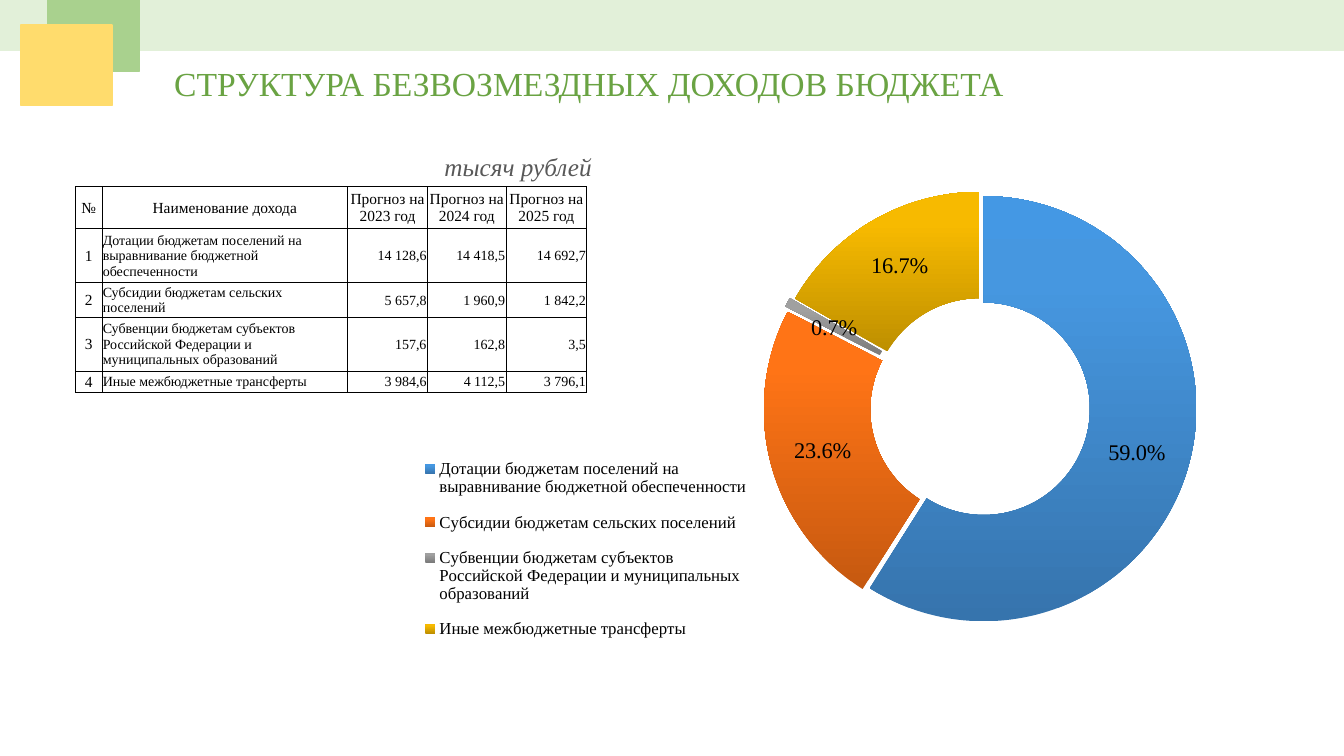
import copy
import dataclasses
import lxml.etree
import pptx
import pptx.chart.data
import pptx.dml.color
import pptx.enum.chart
import pptx.enum.shapes
import pptx.enum.text
import pptx.oxml
import pptx.oxml.ns
import pptx.util

Inches = pptx.util.Inches
Pt = pptx.util.Pt
qn = pptx.oxml.ns.qn
ALIGN = pptx.enum.text.PP_ALIGN
RGB = pptx.dml.color.RGBColor.from_string


@dataclasses.dataclass(frozen=True)
class Theme:
    font: str = "Times New Roman"
    chart_font: str = "Calibri"
    black: str = "000000"
    title: str = "6AA343"
    unit: str = "595959"
    band: str = "E2F0D9"
    green: str = "A9D18E"
    yellow: str = "FFDC6D"
    title_size: int = 24
    unit_size: int = 18
    label_size: int = 16
    legend_size: int = 12
    head_size: int = 11
    body_size: int = 10
    slices: tuple = (
        ("3674AD", "4697E0", "4498E4"),
        ("C65910", "FF7416", "FF7517"),
        ("7B7B7B", "A0A0A0", "A1A1A1"),
        ("BE8F00", "F7BA00", "F8BB00"),
    )


def set_font(font, size, color, name, italic=False):
    font.size = Pt(size)
    font.name = name
    font.italic = italic
    font.color.rgb = RGB(color)


def write(tf, text, *, size, color, font, align=ALIGN.LEFT, italic=False):
    p = tf.paragraphs[0]
    p.alignment = align
    r = p.add_run()
    r.text = text
    set_font(r.font, size, color, font, italic)


def set_layout(parent, x, y, w, h, inner=False):
    for old in parent.findall(qn("c:layout")):
        parent.remove(old)
    layout = lxml.etree.Element(qn("c:layout"))
    manual = lxml.etree.SubElement(layout, qn("c:manualLayout"))
    values = {"layoutTarget": "inner"} if inner else {}
    values |= {"xMode": "edge", "yMode": "edge", "x": x, "y": y, "w": w, "h": h}
    for tag, value in values.items():
        lxml.etree.SubElement(manual, qn(f"c:{tag}")).set("val", str(value))
    return layout


class Deck:
    def __init__(self, theme):
        self.theme = theme
        self.prs = pptx.Presentation()
        self.prs.slide_width = Inches(13.33)
        self.prs.slide_height = Inches(7.5)
        self.s = self.prs.slides.add_slide(self.prs.slide_layouts[6])

    def text(self, box, text, **style):
        tf = self.s.shapes.add_textbox(*map(Inches, box)).text_frame
        tf.word_wrap = False
        write(tf, text, font=self.theme.font, **style)

    def rect(self, box, color):
        kind = pptx.enum.shapes.MSO_SHAPE.RECTANGLE
        sp = self.s.shapes.add_shape(kind, *map(Inches, box))
        sp.shadow.inherit = False
        sp.fill.solid()
        sp.fill.fore_color.rgb = sp.line.color.rgb = RGB(color)
        sp.line.width = Pt(1)

    def border(self, cell):
        props = cell._tc.get_or_add_tcPr()
        for i, side in enumerate(("lnL", "lnR", "lnT", "lnB")):
            ln = pptx.oxml.parse_xml(
                f'<a:{side} {pptx.oxml.ns.nsdecls("a")} w="{Pt(0.5)}"><a:solidFill>'
                f'<a:srgbClr val="{self.theme.black}"/></a:solidFill></a:{side}>')
            props.insert(i, ln)

    def table(self, box, widths, heights, rows):
        t = self.theme
        table = self.s.shapes.add_table(len(rows), len(widths), *map(Inches, box)).table
        for col, width in zip(table.columns, widths):
            col.width = Inches(width)
        for row, height in zip(table.rows, heights):
            row.height = Inches(height)
        for i, row in enumerate(rows):
            for j, text in enumerate(row):
                cell = table.cell(i, j)
                cell.fill.background()
                self.border(cell)
                cell.margin_left = cell.margin_right = cell.margin_top = Inches(0.01)
                cell.margin_bottom = 0
                cell.vertical_anchor = pptx.enum.text.MSO_ANCHOR.MIDDLE
                centred = i == 0 or j == 0
                align = ALIGN.CENTER if centred else ALIGN.LEFT if j == 1 else ALIGN.RIGHT
                write(cell.text_frame, text, size=t.head_size if centred else t.body_size,
                      color=t.black, font=t.font, align=align)

    def gradient(self, fill, colors):
        fill.gradient()
        fill.gradient_angle = 90
        first = fill.gradient_stops[0]._gs
        first.addnext(copy.deepcopy(first))
        for stop, position, color in zip(fill.gradient_stops, (0, 0.8, 1), colors):
            stop.position = position
            stop.color.rgb = RGB(color)

    def doughnut(self, box, names, values, explosions):
        t = self.theme
        data = pptx.chart.data.CategoryChartData()
        data.categories = names
        data.add_series("Series 1", values)
        kind = pptx.enum.chart.XL_CHART_TYPE.DOUGHNUT
        chart = self.s.shapes.add_chart(kind, *map(Inches, box), data).chart
        chart.has_title = False
        set_font(chart.font, t.body_size, t.black, t.chart_font)

        chart.has_legend = True
        legend = chart.legend
        legend.position = pptx.enum.chart.XL_LEGEND_POSITION.LEFT
        legend.include_in_layout = False
        set_font(legend.font, t.legend_size, t.black, t.font)
        element = legend._element
        layout = set_layout(element, 0.01, 0.56, 0.41, 0.37)
        element.find(qn("c:legendPos")).addnext(layout)
        area = chart._chartSpace.chart.plotArea
        area.insert(0, set_layout(area, 0.44, 0.13, 0.53, 0.74, inner=True))

        plot = chart.plots[0]
        plot.vary_by_categories = True
        plot._element.find(qn("c:holeSize")).set("val", "50")
        plot.has_data_labels = True
        labels = plot.data_labels
        labels.show_percentage = True
        labels.show_value = False
        labels.number_format = "0.0%"
        labels.number_format_is_linked = False
        set_font(labels.font, t.label_size, t.black, t.font)
        for i, (colors, explosion) in enumerate(zip(t.slices, explosions)):
            point = plot.series[0].points[i]
            self.gradient(point.format.fill, colors)
            props = point.format.fill._xPr
            offset = lxml.etree.Element(qn("c:explosion"))
            offset.set("val", str(explosion))
            props.addprevious(offset)


def main():
    theme = Theme()
    deck = Deck(theme)
    deck.text((1.63, 0.58, 8.57, 0.5), "СТРУКТУРА БЕЗВОЗМЕЗДНЫХ ДОХОДОВ БЮДЖЕТА",
              size=theme.title_size, color=theme.title)
    deck.rect((0, 0, 13.33, 0.5), theme.band)
    deck.rect((0.47, 0, 0.91, 0.71), theme.green)
    deck.rect((0.21, 0.25, 0.9, 0.8), theme.yellow)

    incomes = (
        ("Дотации бюджетам поселений на выравнивание бюджетной обеспеченности",
         "14 128,6", "14 418,5", "14 692,7"),
        ("Субсидии бюджетам сельских поселений", "5 657,8", "1 960,9", "1 842,2"),
        ("Субвенции бюджетам субъектов Российской Федерации и муниципальных образований",
         "157,6", "162,8", "3,5"),
        ("Иные межбюджетные трансферты", "3 984,6", "4 112,5", "3 796,1"),
    )
    years = [f"Прогноз на {year} год" for year in (2023, 2024, 2025)]
    rows = [("№", "Наименование дохода", *years)]
    rows += [(str(i), *income) for i, income in enumerate(incomes, 1)]
    deck.table((0.75, 1.85, 5.08, 2.04), (0.26, 2.44, 0.79, 0.78, 0.8),
               (0.42, 0.53, 0.35, 0.53, 0.21), rows)
    deck.text((4.31, 1.45, 1.68, 0.4), "тысяч рублей",
              size=theme.unit_size, color=theme.unit, italic=True)
    deck.doughnut((4.09, 1.2, 8.01, 5.7), [income[0] for income in incomes],
                  (59, 23.6, 0.7, 16.7), (2, 5, 8, 4))
    deck.prs.save("out.pptx")


if __name__ == "__main__":
    main()
